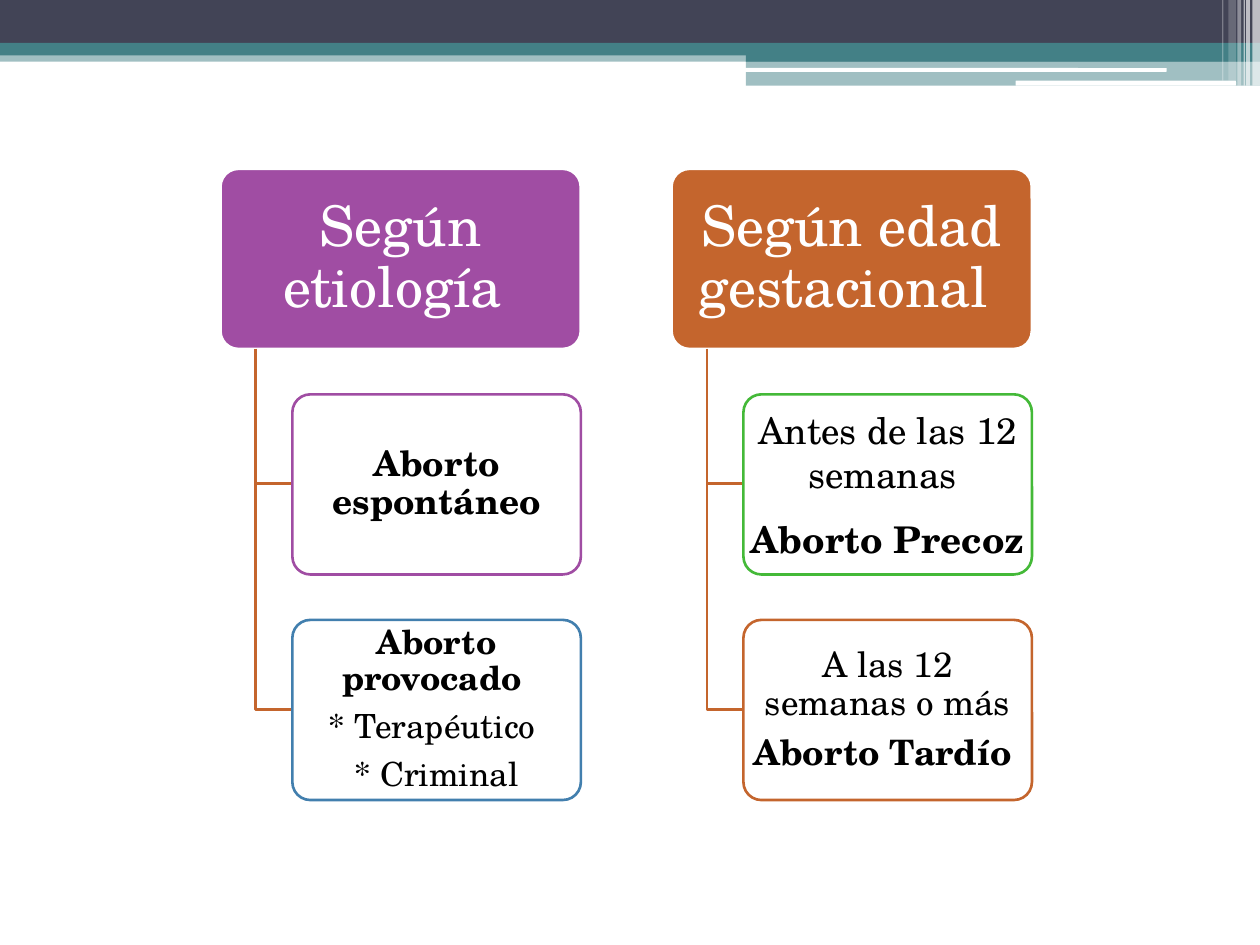
from lxml import etree
from pptx import Presentation
from pptx import util as u
from pptx.dml.color import RGBColor
from pptx.enum import shapes, text
from pptx.oxml.ns import qn

PX = 9144
FONT = "TeX Gyre Schola"
COLORS = {
    "white": "FFFFFF", "black": "000000", "navy": "424456", "teal": "438086",
    "purple": "A04DA3", "orange": "C4652D", "blue": "427FAE", "green": "44B938",
}
BLANK_LAYOUT = 6


class Canvas:
    def __init__(self, page, font):
        self.page = page
        self.font = font

    def color(self, name):
        return RGBColor.from_string(COLORS[name])

    def shape(self, kind, frame, fill, opacity=100):
        box = self.page.shapes.add_shape(kind, *(u.Emu(n * PX) for n in frame))
        box.shadow.inherit = False
        box.fill.solid()
        box.fill.fore_color.rgb = self.color(fill)
        box.line.fill.background()
        if opacity < 100:
            tint = box.fill._xPr.find(qn("a:solidFill"))[0]
            etree.SubElement(tint, qn("a:alpha"), val=str(opacity * 1000))
        return box

    def bar(self, frame, fill, opacity=100):
        return self.shape(shapes.MSO_SHAPE.RECTANGLE, frame, fill, opacity)

    def pill(self, frame, fill):
        box = self.shape(shapes.MSO_SHAPE.ROUNDED_RECTANGLE, frame, fill)
        box.adjustments[0] = 0.17

    def card(self, frame, fill, outline, ink, paragraphs, inset=0,
             spacing=0.9, gap=7):
        box = self.shape(shapes.MSO_SHAPE.ROUNDED_RECTANGLE, frame, fill)
        box.adjustments[0] = 0.1
        box.line.color.rgb = self.color(outline)
        box.line.width = u.Pt(1.5)
        body = box.text_frame
        body.word_wrap = True
        body.vertical_anchor = text.MSO_ANCHOR.MIDDLE
        body.margin_left = body.margin_right = u.Emu(inset * PX)
        body.margin_top = body.margin_bottom = 0
        for index, (words, size, bold) in enumerate(paragraphs):
            para = body.add_paragraph() if index else body.paragraphs[0]
            para.text = words
            para.alignment = text.PP_ALIGN.CENTER
            para.line_spacing = spacing
            para.space_before = u.Pt(gap if index else 0)
            para.font.name = self.font
            para.font.size = u.Pt(size)
            para.font.bold = bold
            para.font.color.rgb = self.color(ink)

    def elbow(self, x, top, right, bottom):
        builder = self.page.shapes.build_freeform(x, top, scale=PX)
        builder.add_line_segments([(x, bottom), (right, bottom)], close=False)
        branch = builder.convert_to_shape()
        branch.shadow.inherit = False
        branch.fill.background()
        branch.line.color.rgb = self.color("orange")
        branch.line.width = u.Pt(1.5)


def draw_header(canvas):
    canvas.bar((0, 40, 1000, 9), "teal", 50)
    canvas.bar((0, 0, 1000, 34), "navy")
    canvas.bar((0, 34, 1000, 10), "teal")
    canvas.bar((592, 39, 408, 10), "teal")
    canvas.bar((592, 48, 408, 20), "teal", 50)
    canvas.pill((591, 54, 335, 3), "white")
    canvas.pill((806, 64, 175, 4), "white")
    stripes = [(994, 6, 68, 65), (989, 3, 68, 65), (987, 1, 68, 60),
               (982, 3, 68, 40), (975, 6, 64, 20), (970, 1, 64, 30)]
    for left, width, height, opacity in stripes:
        canvas.bar((left, 0, width, height), "white", opacity)


def draw_column(canvas, left, heading, fill, cards):
    top, width, height, pitch, indent = 134, 286, 143, 179, 57
    canvas.card((left, top, width, height), fill, "white", "white",
                [(heading, 32, False)], inset=3)
    for row, (outline, paragraphs, layout) in enumerate(cards, 1):
        card_top = top + row * pitch
        canvas.elbow(left + 28, top + height, left + indent,
                     card_top + height // 2)
        canvas.card((left + indent, card_top, width - indent, height),
                    "white", outline, "black", paragraphs, **layout)


def main():
    deck = Presentation()
    deck.slide_width, deck.slide_height = u.Emu(1000 * PX), u.Emu(750 * PX)
    page = deck.slides.add_slide(deck.slide_layouts[BLANK_LAYOUT])
    canvas = Canvas(page, FONT)
    draw_header(canvas)
    draw_column(canvas, 175, "Según etiología ", "purple", [
        ("purple", [("Aborto espontáneo", 20, True)], {}),
        ("blue", [("Aborto provocado ", 19, True),
                  ("* Terapéutico ", 19, False),
                  ("* Criminal", 19, False)], {}),
    ])
    draw_column(canvas, 533, "Según edad gestacional ", "orange", [
        ("green", [("Antes de las 12 semanas ", 21, False),
                   ("Aborto Precoz", 21, True)], {"spacing": 1.0, "gap": 12}),
        ("orange", [("A las 12 semanas o más", 20, False),
                    ("Aborto Tardío ", 20, True)], {}),
    ])
    deck.save("out.pptx")


if __name__ == "__main__":
    main()
